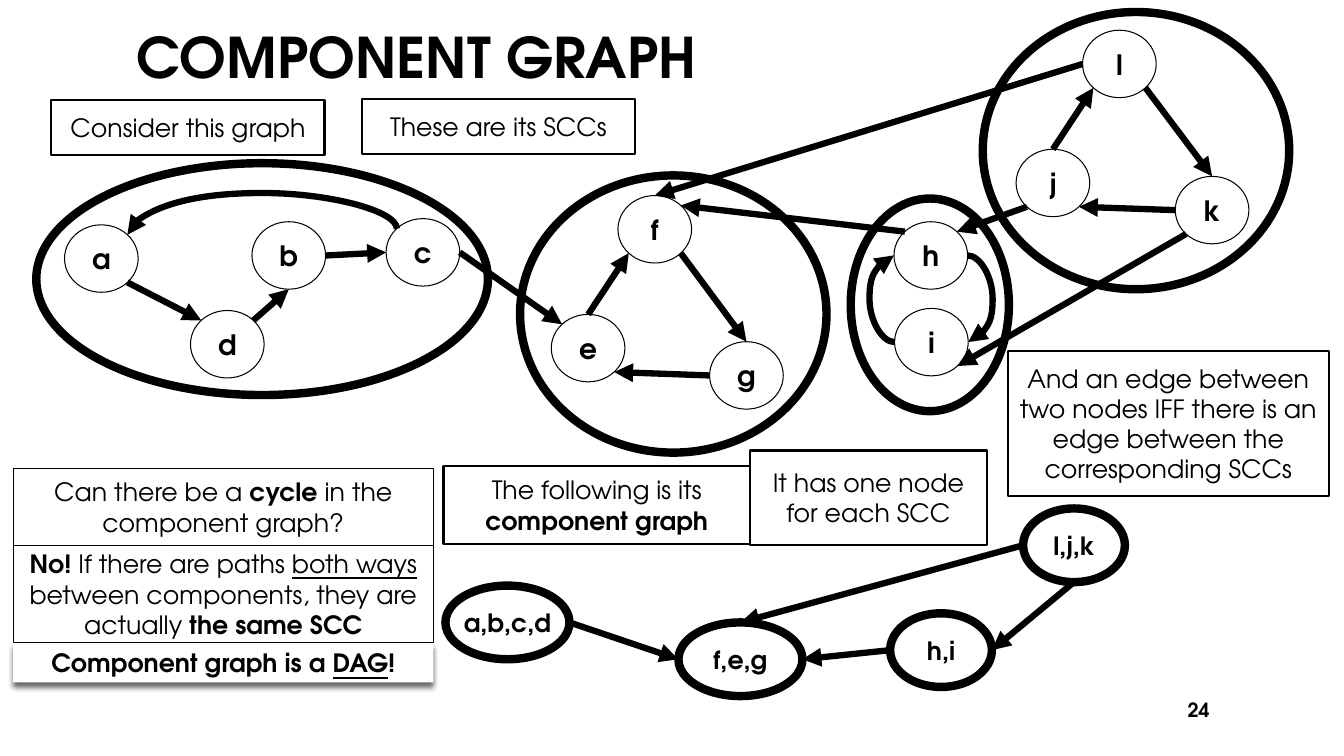
from math import cos, pi, sin

from lxml.etree import SubElement
from pptx import Presentation
from pptx.dml.color import RGBColor
from pptx.enum.shapes import MSO_CONNECTOR as LINE, MSO_SHAPE as SHAPE
from pptx.enum.text import MSO_ANCHOR, MSO_AUTO_SIZE, PP_ALIGN as ALIGN
from pptx.oxml.ns import qn
from pptx.util import Pt

THEME = {
    "font": "TeX Gyre Adventor",
    "ink": RGBColor(0, 0, 0),
    "paper": RGBColor(255, 255, 255),
    "title": 40, "node": 20, "body": 18, "number": 14,
    "thin": 0.75, "frame": 1.5, "edge": 4.5, "ring": 6,
}

TITLE = "COMPONENT GRAPH"
NUMBER = "24"
NODE_SIZE = (52.6, 48.2)
NODES = {
    "a": (46.1, 160.6), "b": (180, 158.4), "c": (275.8, 156.2), "d": (136.1, 221.8),
    "e": (393.8, 224.6), "f": (441.4, 139.7), "g": (506.9, 244.1),
    "h": (638.6, 158.4), "i": (639, 220.3),
    "j": (725.8, 106.6), "k": (839.5, 126), "l": (773.3, 21.6),
}
COMPONENTS = {
    "a,b,c,d": (318.2, 418.3, 88.6, 52.6), "f,e,g": (484.6, 444.6, 88.6, 52.6),
    "h,i": (635.8, 438.1, 72.7, 52.6), "l,j,k": (730.8, 363.2, 72.7, 52.6),
}
EDGES = [
    ("b", "right", "c", "left"), ("d", "top right", "b", "bottom"),
    ("a", "bottom right", "d", "top left"), ("f", "bottom right", "g", "top"),
    ("g", "left", "e", "bottom right"), ("e", "top", "f", "bottom left"),
    ("c", "right", "e", "top left"), ("h", "top left", "f", "top right"),
    ("l", "bottom right", "k", "top"), ("k", "left", "j", "bottom right"),
    ("j", "top", "l", "bottom left"), ("l", "left", "f", "top"),
    ("k", "bottom left", "i", "bottom right"), ("j", "bottom left", "h", "top right"),
    ("a,b,c,d", "right", "f,e,g", "left"), ("l,j,k", "left", "f,e,g", "top"),
    ("h,i", "left", "f,e,g", "right"), ("l,j,k", "bottom", "h,i", "right"),
]
SIDE_CURVES = [("h", "right", "i", "right"), ("i", "left", "h", "left")]
TOP_CURVE = ("c", "top left", "a", "top right")
SIDE_BULGE, TOP_BULGE = 18, -25.5
BOXES = [
    ((36.7, 71.3, 195.1, 39.6), "frame", [("Consider this graph", "")]),
    ((258.5, 70.6, 195.1, 39.6), "frame", [("These are its SCCs", "")]),
    ((316.8, 332.6, 218.9, 56.2), "frame",
     [("The following is its ", ""), ("component graph", "b")]),
    ((720, 250.6, 229, 103.7), "frame",
     [("And an edge between two nodes IFF there is an edge between the corresponding SCCs", "")]),
    ((535.7, 321.8, 169.2, 67.4), "frame", [("It has one node for each SCC", "")]),
    ((9.4, 334.8, 300.2, 54.7), "thin",
     [("Can there be a ", ""), ("cycle", "b"), (" in the component graph?", "")]),
    ((9.4, 389.5, 300.2, 69.8), "thin",
     [("No!", "b"), (" If there are paths ", ""), ("both ways", "u"),
      (" between components, they are actually ", ""), ("the same SCC", "b")]),
    ((9.4, 459.4, 300.2, 28.1), None,
     [("Component graph is a ", "b"), ("DAG", "bu"), ("!", "b")]),
]
RINGS = [
    (25.9, 116.6, 322.6, 165.6), (371.5, 125.3, 218.9, 198),
    (607.7, 141.8, 113, 151.9), (702, 8.6, 218.9, 198),
]
SITES = ["right", "bottom right", "bottom", "bottom left",
         "left", "top left", "top", "top right"]


def pts(values):
    return [Pt(v) for v in values]


def write(sp, runs, size, align=ALIGN.CENTER, wrap=True):
    tf = sp.text_frame
    tf.word_wrap = wrap
    tf.auto_size = MSO_AUTO_SIZE.NONE
    tf.vertical_anchor = MSO_ANCHOR.MIDDLE
    p = tf.paragraphs[0]
    p.alignment = align
    p.font.name = THEME["font"]
    p.font.size = Pt(THEME[size])
    p.font.color.rgb = THEME["ink"]
    all_bold = all("b" in style for _, style in runs)
    p.font.bold = all_bold
    for text, style in runs:
        r = p.add_run()
        r.text = text
        if "b" in style and not all_bold:
            r.font.bold = True
        if "u" in style:
            r.font.underline = True


def add_outline(s, kind, box, weight, filled=True):
    sp = s.shapes.add_shape(kind, *pts(box))
    sp.shadow.inherit = False
    if filled:
        sp.fill.solid()
        sp.fill.fore_color.rgb = THEME["paper"]
    else:
        sp.fill.background()
    if weight:
        sp.line.color.rgb = THEME["ink"]
        sp.line.width = Pt(THEME[weight])
    else:
        sp.line.fill.background()
    return sp


def add_shadow(sp):
    effects = sp._element.spPr.find(qn("a:effectLst"))
    shadow = SubElement(effects, qn("a:outerShdw"), blurRad=str(Pt(4)),
                        dist=str(Pt(3)), dir="5400000", rotWithShape="0")
    color = SubElement(shadow, qn("a:srgbClr"), val=str(THEME["ink"]))
    SubElement(color, qn("a:alpha"), val="60000")


def site(box, name):
    x, y, w, h = box
    angle = SITES.index(name) * pi / 4
    return x + w / 2 * (1 + cos(angle)), y + h / 2 * (1 + sin(angle))


def add_arrow(s, start, end, kind=LINE.STRAIGHT):
    cx = s.shapes.add_connector(kind, *pts(start + end))
    cx.line.color.rgb = THEME["ink"]
    cx.line.width = Pt(THEME["edge"])
    SubElement(cx.line._get_or_add_ln(), qn("a:tailEnd"), type="triangle")
    SubElement(cx._element.spPr, qn("a:effectLst"))
    return cx


def add_curve(s, start, end, bulge, width):
    cx = add_arrow(s, start, end, LINE.CURVE)
    guides = cx._element.spPr.find(qn("a:prstGeom")).get_or_add_avLst()
    SubElement(guides, qn("a:gd"), name="adj1",
               fmla=f"val {round(bulge / width * 100000)}")
    return cx


def add_top_curve(s, start, end):
    mid_x, mid_y = (start[0] + end[0]) / 2, (start[1] + end[1]) / 2
    half_w, half_h = abs(end[1] - start[1]) / 2, abs(end[0] - start[0]) / 2
    cx = add_curve(s, (mid_x + half_w, mid_y + half_h),
                   (mid_x - half_w, mid_y - half_h), TOP_BULGE, half_w * 2)
    cx._element.spPr.find(qn("a:xfrm")).set("rot", "16200000")


def main():
    prs = Presentation()
    prs.slide_width, prs.slide_height = Pt(960), Pt(540)
    s = prs.slides.add_slide(prs.slide_layouts[5])

    title = s.shapes.title
    title.left, title.top, title.width, title.height = pts((90, 0, 780, 80.6))
    write(title, [(TITLE, "b")], "title", ALIGN.LEFT)

    places = {name: spot + NODE_SIZE for name, spot in NODES.items()}
    for name, box in places.items():
        write(add_outline(s, SHAPE.OVAL, box, "thin"), [(name, "b")], "node", wrap=False)
    for name, box in COMPONENTS.items():
        sp = add_outline(s, SHAPE.OVAL, box, "ring", filled=False)
        write(sp, [(name, "b")], "body", wrap=False)
    places.update(COMPONENTS)

    def ends(edge):
        source, leave, target, enter = edge
        return site(places[source], leave), site(places[target], enter)

    for edge in EDGES:
        add_arrow(s, *ends(edge))
    for edge in SIDE_CURVES:
        start, end = ends(edge)
        add_curve(s, start, end, SIDE_BULGE, abs(end[0] - start[0]))
    add_top_curve(s, *ends(TOP_CURVE))

    for box, weight, runs in BOXES:
        sp = add_outline(s, SHAPE.RECTANGLE, box, weight)
        write(sp, runs, "body")
        if weight is None:
            add_shadow(sp)
    for box in RINGS:
        add_outline(s, SHAPE.OVAL, box, "ring", filled=False)

    number = s.shapes.add_textbox(*pts((828, 492.5, 43.2, 28.8)))
    write(number, [(NUMBER, "b")], "number", ALIGN.RIGHT)
    prs.save("out.pptx")


if __name__ == "__main__":
    main()
